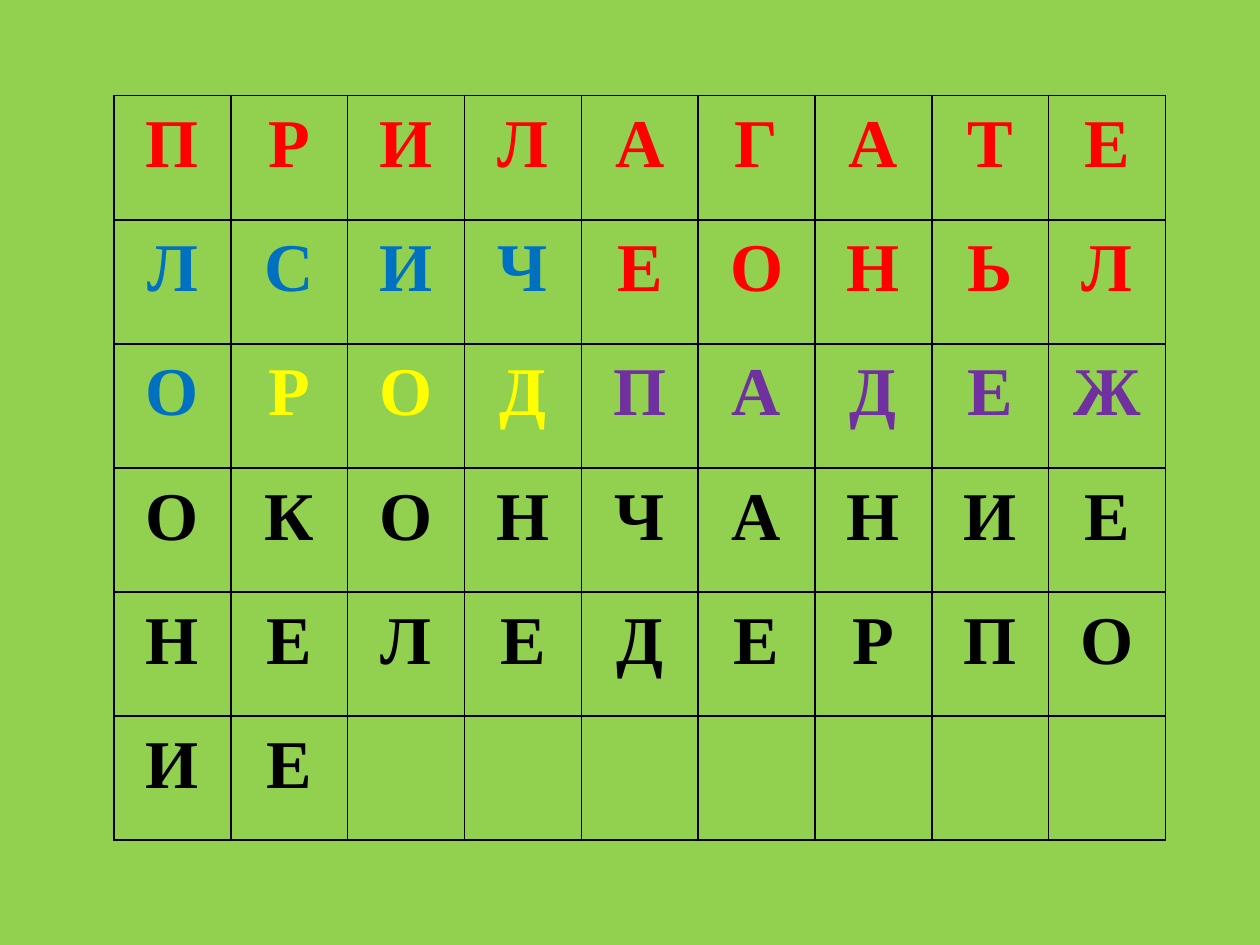
from lxml.etree import SubElement
from pptx import Presentation
from pptx.dml.color import RGBColor
from pptx.enum.text import PP_ALIGN
from pptx.oxml.ns import qn
from pptx.util import Cm, Pt

# Letters of each row, with one colour key per letter
ROWS = [
    ("ПРИЛАГАТЕ", "rrrrrrrrr"),
    ("ЛСИЧЕОНЬЛ", "bbbbrrrrr"),
    ("ОРОДПАДЕЖ", "byyyppppp"),
    ("ОКОНЧАНИЕ", "kkkkkkkkk"),
    ("НЕЛЕДЕРПО", "kkkkkkkkk"),
    ("ИЕ", "kk"),
]
COLUMNS = 9

THEME = {
    "background": "92D050",
    "border": "000000",
    "border_width": Pt(1),
    "font": "Times New Roman",
    "size": Pt(39),
    "letters": {"r": "FF0000", "b": "0070C0", "y": "FFFF00",
                "p": "7030A0", "k": "000000"},
}

LEFT, TOP = Cm(2.3), Cm(1.93)
WIDTH, ROW_HEIGHT = Cm(21.2), Cm(2.5)
INSET = Cm(0.1)


def write_text(tf, text, *, color, size=THEME["size"], font=THEME["font"],
               bold=True, align=PP_ALIGN.CENTER, spacing=1.15):
    p = tf.paragraphs[0]
    p.alignment, p.line_spacing = align, spacing
    r = p.add_run()
    r.text = text
    r.font.name, r.font.size, r.font.bold = font, size, bold
    r.font.color.rgb = RGBColor.from_string(color)


def style_cell(cell):
    cell.margin_left = cell.margin_right = INSET
    cell.margin_top = cell.margin_bottom = 0
    props = cell._tc.get_or_add_tcPr()
    for side in ("a:lnL", "a:lnR", "a:lnT", "a:lnB"):
        line = SubElement(props, qn(side), w=str(THEME["border_width"]))
        fill = SubElement(line, qn("a:solidFill"))
        SubElement(fill, qn("a:srgbClr"), val=THEME["border"])
    cell.fill.background()


def main():
    prs = Presentation()
    prs.slide_width, prs.slide_height = Cm(25.4), Cm(19.05)
    slide = prs.slides.add_slide(prs.slide_layouts[6])

    # Background
    fill = slide.background.fill
    fill.solid()
    fill.fore_color.rgb = RGBColor.from_string(THEME["background"])

    # Letter grid
    table = slide.shapes.add_table(len(ROWS), COLUMNS, LEFT, TOP, WIDTH,
                                   ROW_HEIGHT * len(ROWS)).table
    table.first_row = table.horz_banding = False
    for column in table.columns:
        column.width = WIDTH // COLUMNS
    for row in table.rows:
        row.height = ROW_HEIGHT
    for cell in table.iter_cells():
        style_cell(cell)

    # Letters
    for i, (letters, keys) in enumerate(ROWS):
        for j, (letter, key) in enumerate(zip(letters, keys)):
            write_text(table.cell(i, j).text_frame, letter,
                       color=THEME["letters"][key])

    prs.save("out.pptx")


if __name__ == "__main__":
    main()
